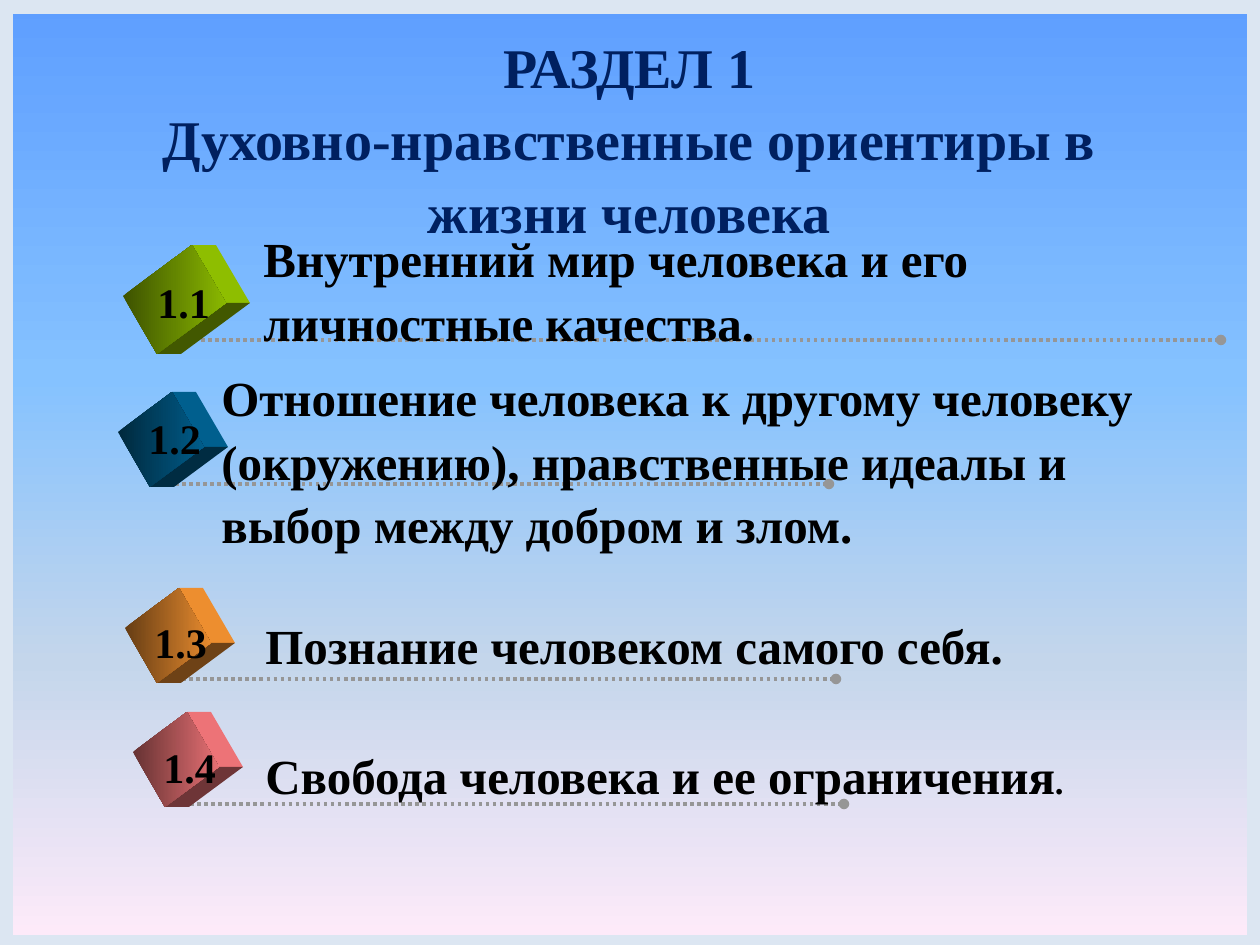
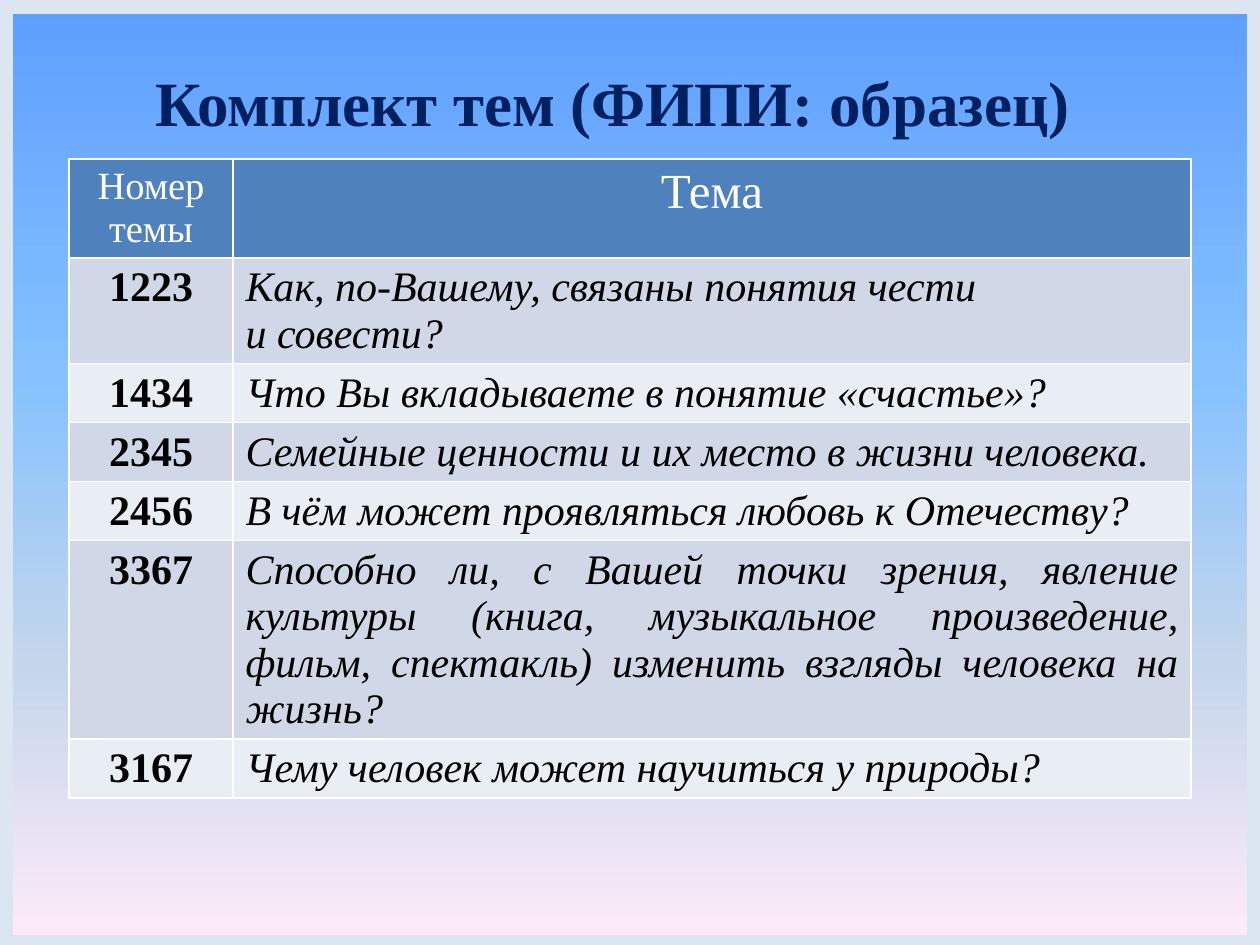
from lxml import etree
from pptx import Presentation
from pptx import util as u
from pptx.dml.color import RGBColor
from pptx.enum import dml, shapes, text
from pptx.oxml import ns

SCALE = 914400 / 126
FONT = "Times New Roman"
COLORS = {
    "navy": "002060", "black": "000000", "white": "FFFFFF", "frame": "DCE6F2",
    "dots": "969696", "header": "4F81BD", "odd_row": "D0D8E8", "even_row": "E9EDF4",
    "green": "99CC00", "blue": "006699", "orange": "FF9933", "pink": "FF7C80",
}
SKY = [(0, "5E9EFF"), (40, "85C2FF"), (70, "C4D6EB"), (100, "FFEBFA")]


def px(length):
    return u.Emu(round(length * SCALE))


def rgb(name, brightness=1):
    return RGBColor(*(round(part * brightness) for part in RGBColor.from_string(COLORS[name])))


class Deck:
    """Holds the shared style and the slide being filled."""

    def __init__(self):
        self.prs = Presentation()
        self.prs.slide_width, self.prs.slide_height = px(1260), px(945)
        self.slide = None
        self.paint_background()

    def paint_background(self):
        master = self.prs.slide_master
        fill = master.background.fill
        fill.gradient()
        fill.gradient_angle = 270
        stops = master.element.find(".//" + ns.qn("a:gsLst"))
        for stop in list(stops):
            stops.remove(stop)
        for percent, color in SKY:
            stop = etree.SubElement(stops, ns.qn("a:gs"), pos=str(percent * 1000))
            etree.SubElement(stop, ns.qn("a:srgbClr"), val=color)

    def add_slide(self):
        self.slide = self.prs.slides.add_slide(self.prs.slide_layouts[5])

    def frame_master(self):
        frame = self.slide.shapes.add_shape(
            shapes.MSO_SHAPE.FRAME, px(0), px(1), px(1260), px(947))
        frame.adjustments[0] = 0.008
        frame.shadow.inherit = False
        frame.fill.solid()
        frame.fill.fore_color.rgb = frame.line.color.rgb = rgb("frame")
        frame.line.width = u.Pt(6)
        self.prs.slide_master.shapes.element.insert(2, frame.element)

    def run(self, paragraph, words, size, color="black", bold=True, italic=False):
        run = paragraph.add_run()
        run.text = words
        run.font.name, run.font.size = FONT, u.Pt(size)
        run.font.bold, run.font.italic = bold, italic
        run.font.color.rgb = rgb(color)

    def title(self, lines, x, y, size):
        title = self.slide.shapes.title
        title.left, title.top, title.width, title.height = map(px, (x, y, 1087, 123))
        frame = title.text_frame
        frame.auto_size = text.MSO_AUTO_SIZE.NONE
        frame.vertical_anchor = text.MSO_ANCHOR.MIDDLE
        paragraph = frame.paragraphs[0]
        paragraph.alignment = text.PP_ALIGN.CENTER
        paragraph.line_spacing = 1.08
        for index, line in enumerate(lines):
            if index:
                paragraph.add_line_break()
            self.run(paragraph, line, size, "navy")

    def words(self, x, y, width, height, runs):
        box = self.slide.shapes.add_textbox(px(x), px(y), px(width), px(height))
        box.text_frame.word_wrap = True
        paragraph = box.text_frame.paragraphs[0]
        paragraph.line_spacing = 1.08
        for content, size in runs:
            self.run(paragraph, content, size)

    def dotted_line(self, start, end, y):
        line = self.slide.shapes.add_connector(
            shapes.MSO_CONNECTOR.STRAIGHT, px(start), px(y), px(end), px(y))
        line.line.color.rgb = rgb("dots")
        line.line.width = u.Pt(2)
        line.line.dash_style = dml.MSO_LINE.ROUND_DOT
        outline = line.line._get_or_add_ln()
        etree.SubElement(outline, ns.qn("a:tailEnd"), type="oval")
        etree.SubElement(line.element.spPr, ns.qn("a:effectLst"))

    def face(self, corners, color, brightness, dark_side=None):
        builder = self.slide.shapes.build_freeform(*corners[0], scale=SCALE)
        builder.add_line_segments(corners[1:], close=True)
        face = builder.convert_to_shape()
        face.shadow.inherit = False
        face.line.fill.background()
        if dark_side is None:
            face.fill.solid()
            face.fill.fore_color.rgb = rgb(color, brightness)
            return
        face.fill.gradient()
        face.fill.gradient_angle = 0
        for stop, level in zip(face.fill.gradient_stops, (dark_side, brightness)):
            stop.color.rgb = rgb(color, level)

    def cube(self, x, y, upper_edge, right_edge, color, depth=24):
        left = (x, y)
        top = (x + upper_edge[0], y + upper_edge[1])
        right = (top[0] + right_edge[0], top[1] + right_edge[1])
        bottom = (x + right_edge[0], y + right_edge[1])
        back_top, back_right, back_bottom = (
            (corner[0] + depth, corner[1]) for corner in (top, right, bottom))
        self.face([top, back_top, back_right, right], color, 0.93)
        self.face([bottom, right, back_right, back_bottom], color, 0.43)
        self.face([left, top, right, bottom], color, 0.9, 0.4)

    def table(self, x, y, widths, heights, rows):
        grid = self.slide.shapes.add_table(
            len(rows), len(widths), px(x), px(y), px(sum(widths)), px(sum(heights))).table
        for column, width in zip(grid.columns, widths):
            column.width = px(width)
        for index, (row, height, entries) in enumerate(zip(grid.rows, heights, rows)):
            row.height = px(height)
            band = "header" if index == 0 else "odd_row" if index % 2 else "even_row"
            for column, (cell, content) in enumerate(zip(row.cells, entries)):
                self.cell(cell, content, band, column)

    def cell(self, cell, content, band, column):
        is_header = band == "header"
        is_topic = column == 1 and not is_header
        size = (22, 28)[column] if is_header else 24
        for index, line in enumerate(content.split("\n")):
            frame = cell.text_frame
            paragraph = frame.add_paragraph() if index else frame.paragraphs[0]
            paragraph.alignment = text.PP_ALIGN.JUSTIFY if is_topic else text.PP_ALIGN.CENTER
            self.run(paragraph, line, size, "white" if is_header else "black",
                     bold=not is_header and not is_topic, italic=is_topic)
        properties = cell._tc.get_or_add_tcPr()
        for side in ("lnL", "lnR", "lnT", "lnB"):
            border = etree.SubElement(properties, ns.qn("a:" + side), w=str(u.Pt(1)))
            fill = etree.SubElement(border, ns.qn("a:solidFill"))
            etree.SubElement(fill, ns.qn("a:srgbClr"), val=COLORS["white"])
        cell.fill.solid()
        cell.fill.fore_color.rgb = rgb(band)


def build_sections(deck):
    deck.add_slide()
    deck.frame_master()
    deck.title(["РАЗДЕЛ 1", "Духовно-нравственные ориентиры в жизни человека"], 86, 74, 32)
    large, small = ((69, -51), (34, 58)), ((54, -40), (32, 55))
    sections = [
        ("1.1", "green", (123, 296), large, (194, 1221, 340), (145, 266),
         (251, 218, 914, 131), [("Внутренний мир человека и его личностные качества.", 28)]),
        ("1.2", "blue", (118, 432), small, (168, 829, 484), (136, 402),
         (209, 357, 945, 190), [("Отношение человека к другому человеку (окружению), "
                                 "нравственные идеалы и выбор между добром и злом.", 28)]),
        ("1.3", "orange", (125, 628), small, (175, 836, 679), (142, 606),
         (253, 605, 800, 72), [("Познание человеком самого себя.", 28)]),
        ("1.4", "pink", (133, 752), small, (183, 844, 804), (151, 731),
         (253, 735, 850, 72), [("Свобода человека и ее ограничения", 28), (".", 20)]),
    ]
    for number, color, corner, edges, dots, label, area, topic in sections:
        deck.dotted_line(*dots)
        deck.cube(*corner, *edges, color)
        deck.words(*label, 90, 64, [(number, 24)])
        deck.words(*area, topic)


def build_topics(deck):
    deck.add_slide()
    deck.title(["Комплект тем (ФИПИ: образец)"], 69, 37, 36)
    topics = [
        ("Номер темы", "Тема"),
        ("1223", "Как, по-Вашему, связаны понятия чести\nи совести?"),
        ("1434", "Что Вы вкладываете в понятие «счастье»?"),
        ("2345", "Семейные ценности и их место в жизни человека."),
        ("2456", "В чём может проявляться любовь к Отечеству?"),
        ("3367", "Способно ли, с Вашей точки зрения, явление культуры (книга, музыкальное "
                 "произведение, фильм, спектакль) изменить взгляды человека на жизнь?"),
        ("3167", "Чему человек может научиться у природы?"),
    ]
    deck.table(69, 159, [164, 958], [99, 105, 59, 59, 59, 198, 59], topics)


def main():
    deck = Deck()
    build_sections(deck)
    build_topics(deck)
    deck.prs.save("out.pptx")


if __name__ == "__main__":
    main()
